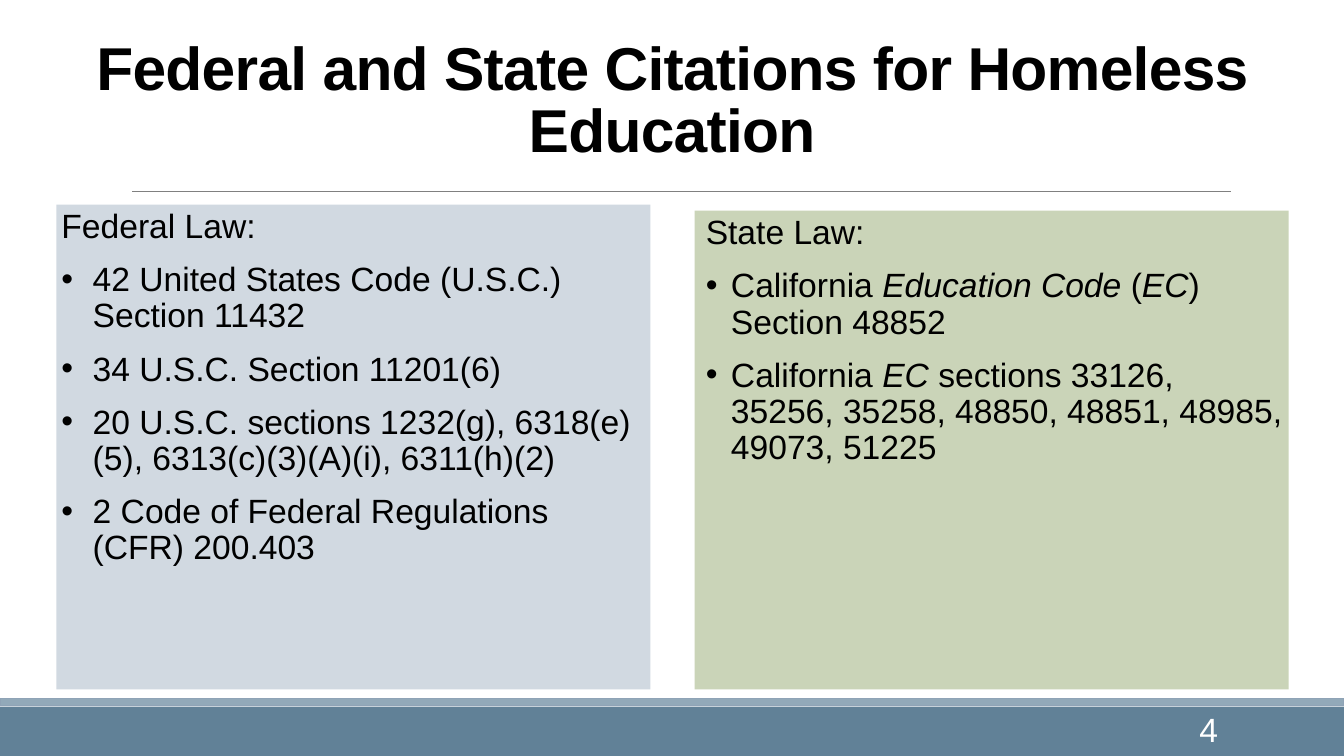
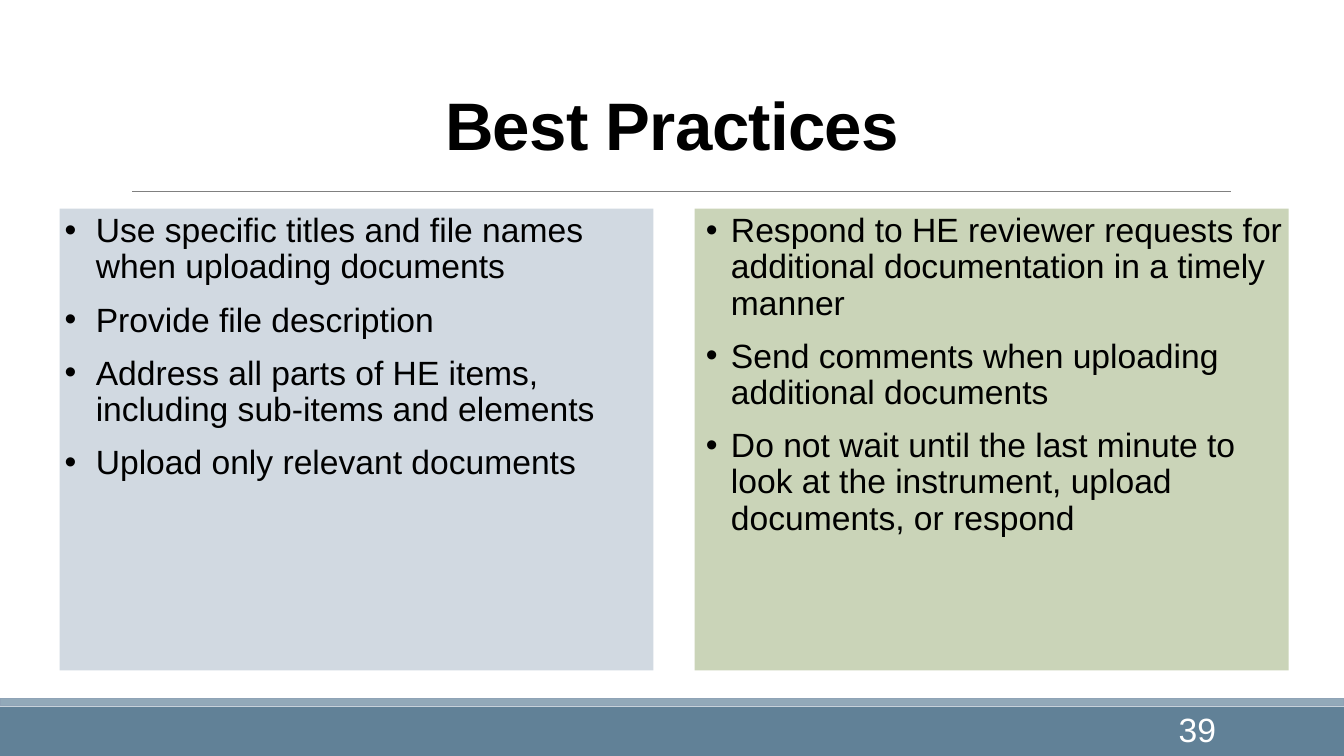
from lxml.etree import SubElement
from pptx import Presentation
from pptx.dml.color import RGBColor
from pptx.enum.shapes import MSO_CONNECTOR, MSO_SHAPE
from pptx.enum.text import MSO_ANCHOR, PP_ALIGN
from pptx.oxml.ns import qn
from pptx.util import Inches, Pt

# Shared colours and formats
BLACK = RGBColor(0x00, 0x00, 0x00)
WHITE = RGBColor(0xFF, 0xFF, 0xFF)
FOOTER_BLUE = RGBColor(0x61, 0x81, 0x97)
STRIPE_BLUE = RGBColor(0x92, 0xA9, 0xB9)
STRIPE_EDGE = RGBColor(0x8F, 0xA3, 0xB6)
RULE_GRAY = RGBColor(0x80, 0x80, 0x80)
PANEL_BLUE = RGBColor(0xD1, 0xD9, 0xE1)
PANEL_GREEN = RGBColor(0xCA, 0xD4, 0xB8)

SLIDE_WIDTH = 13.33
PANEL_WIDTH = 5.89
PANEL_INSET = Inches(0.05)

BODY_FONT = {"name": "Arial", "size": Pt(24)}
TITLE_FORMAT = {"alignment": PP_ALIGN.CENTER, "line_spacing": 0.85}
PANEL_FORMAT = {"alignment": PP_ALIGN.LEFT, "line_spacing": 0.9, "space_after": Pt(12)}
PANEL_FRAME = {"word_wrap": True, "vertical_anchor": MSO_ANCHOR.TOP,
               "margin_left": PANEL_INSET, "margin_right": PANEL_INSET,
               "margin_top": PANEL_INSET, "margin_bottom": PANEL_INSET}

# Panel sides: colour, heading indent, bullet hanging indent
BULLET_INDENT = 0.31
SIDES = [(PANEL_BLUE, 0, 0.31), (PANEL_GREEN, 0.06, 0.25)]

# Content: each panel has left, top, height, heading and bullets; *asterisks* mark italics
SLIDES = [
    {"title": "Federal and State Citations for Homeless Education",
     "title_width": 11.95, "title_size": 43.2, "number": "4", "number_left": 10.75,
     "panels": [
         (0.56, 2.03, 4.81, "Federal Law:", [
             "42 United States Code (U.S.C.) Section 11432",
             "34 U.S.C. Section 11201(6)",
             "20 U.S.C. sections 1232(g), 6318(e)(5), 6313(c)(3)(A)(i), 6311(h)(2)",
             "2 Code of Federal Regulations (CFR) 200.403"]),
         (6.89, 2.09, 4.75, "State Law:", [
             "California *Education Code *(*EC*) Section 48852",
             "California *EC* sections 33126, 35256, 35258, 48850, 48851, 48985, "
             "49073, 51225"])]},
    {"title": "Best Practices",
     "title_width": 11.42, "title_size": 48, "number": "39", "number_left": 10.73,
     "panels": [
         (0.59, 2.07, 4.58, None, [
             "Use specific titles and file names when uploading documents",
             "Provide file description",
             "Address all parts of HE items, including sub-items and elements",
             "Upload only relevant documents"]),
         (6.89, 2.07, 4.58, None, [
             "Respond to HE reviewer requests for additional documentation in a timely manner",
             "Send comments when uploading additional documents",
             "Do not wait until the last minute to look at the instrument, upload documents, "
             "or respond"])]},
]


def add_block(slide, left, top, width, height, fill):
    block = slide.shapes.add_shape(MSO_SHAPE.RECTANGLE, Inches(left), Inches(top),
                                   Inches(width), Inches(height))
    block.shadow.inherit = False
    block.fill.solid()
    block.fill.fore_color.rgb = fill
    block.line.fill.background()
    return block


def write_text(paragraph, text, color, paragraph_format, font_format):
    for name, value in paragraph_format.items():
        setattr(paragraph, name, value)
    for position, part in enumerate(text.split("*")):
        if not part:
            continue
        run = paragraph.add_run()
        run.text = part
        for name, value in font_format.items():
            setattr(run.font, name, value)
        run.font.color.rgb = color
        if position % 2:
            run.font.italic = True


prs = Presentation()
prs.slide_width = Inches(SLIDE_WIDTH)
prs.slide_height = Inches(7.5)
blank = prs.slide_layouts[6]

for content in SLIDES:
    slide = prs.slides.add_slide(blank)

    # Footer band and stripe
    add_block(slide, 0, 7.01, SLIDE_WIDTH, 0.49, FOOTER_BLUE)
    stripe = add_block(slide, 0, 6.93, SLIDE_WIDTH, 0.07, STRIPE_BLUE)
    stripe.line.color.rgb = STRIPE_EDGE
    stripe.line.width = Pt(1.25)

    # Rule under the title
    rule = slide.shapes.add_connector(MSO_CONNECTOR.STRAIGHT, Inches(1.31), Inches(1.9),
                                      Inches(12.21), Inches(1.9))
    rule.line.color.rgb = RULE_GRAY
    rule.line.width = Pt(0.5)
    SubElement(rule._element.spPr, qn("a:effectLst"))

    # Title, centred on the slide
    title_left = (SLIDE_WIDTH - content["title_width"]) / 2
    title = slide.shapes.add_textbox(Inches(title_left), Inches(0.4),
                                     Inches(content["title_width"]), Inches(1.28)).text_frame
    title.word_wrap = True
    title.vertical_anchor = MSO_ANCHOR.BOTTOM
    heading = title.paragraphs[0]
    write_text(heading, content["title"], BLACK, TITLE_FORMAT,
               {"name": "Arial", "size": Pt(content["title_size"]), "bold": True})
    heading.runs[0].font._element.set("spc", "-50")

    # Two panels
    for (fill, heading_indent, hanging), panel in zip(SIDES, content["panels"]):
        left, top, height, label, bullets = panel
        frame = add_block(slide, left, top, PANEL_WIDTH, height, fill).text_frame
        for name, value in PANEL_FRAME.items():
            setattr(frame, name, value)
        entries = [(label, False)] if label else []
        entries += [(bullet, True) for bullet in bullets]
        for index, (text, bulleted) in enumerate(entries):
            paragraph = frame.add_paragraph() if index else frame.paragraphs[0]
            props = paragraph._p.get_or_add_pPr()
            props.set("marL", str(Inches(BULLET_INDENT if bulleted else heading_indent)))
            props.set("indent", str(-Inches(hanging) if bulleted else 0))
            if bulleted:
                SubElement(props, qn("a:buFont"), typeface="Arial")
                SubElement(props, qn("a:buChar"), char="•")
            write_text(paragraph, text, BLACK, PANEL_FORMAT, BODY_FONT)

    # Slide number
    number = slide.shapes.add_textbox(Inches(content["number_left"]), Inches(7.03),
                                      Inches(1.43), Inches(0.4)).text_frame
    number.word_wrap = True
    number.vertical_anchor = MSO_ANCHOR.MIDDLE
    write_text(number.paragraphs[0], content["number"], WHITE,
               {"alignment": PP_ALIGN.RIGHT}, BODY_FONT)

prs.save("out.pptx")
